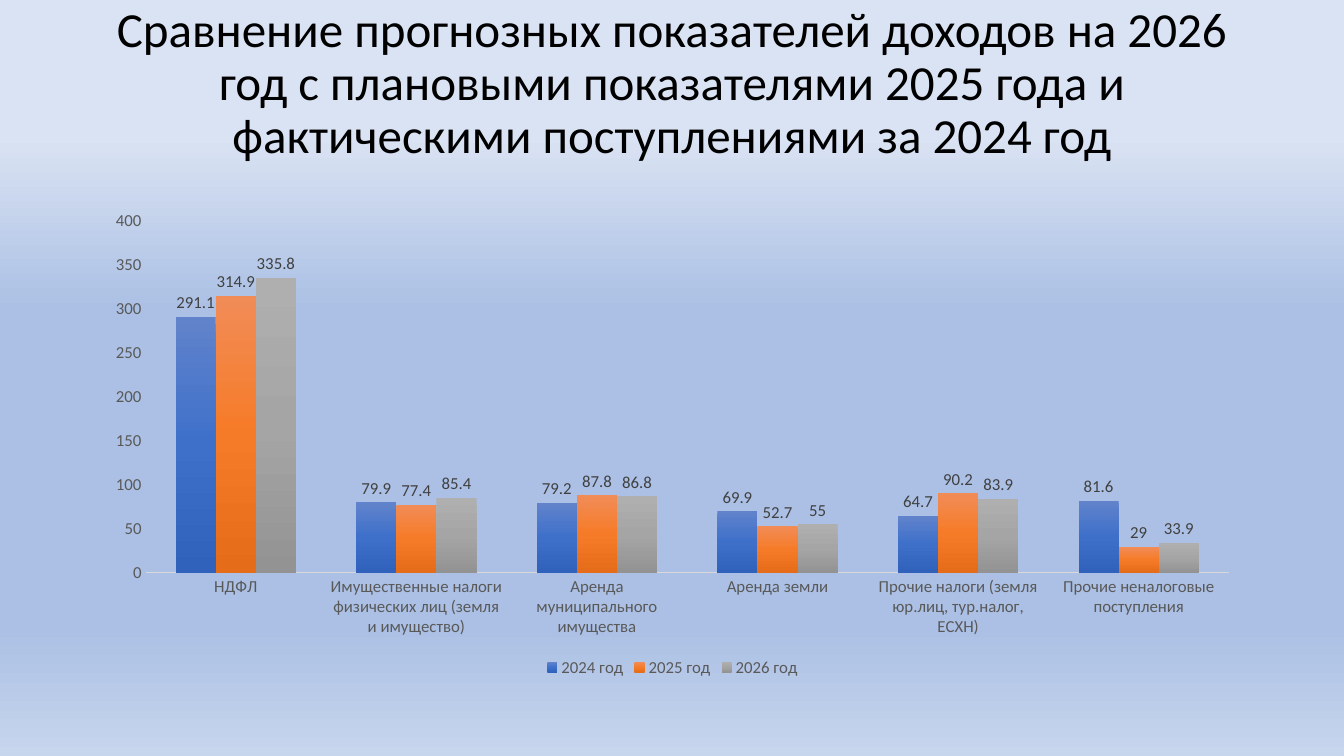
from lxml.etree import SubElement
from pptx import Presentation
from pptx.chart.data import CategoryChartData
from pptx.dml.color import RGBColor
from pptx.enum.chart import (
    XL_CHART_TYPE as ChartType,
    XL_LABEL_POSITION as LabelPosition,
    XL_LEGEND_POSITION as LegendPosition,
    XL_TICK_MARK as TickMark,
)
from pptx.enum.text import MSO_ANCHOR as Anchor, PP_ALIGN as Align
from pptx.oxml.ns import qn
from pptx.util import Inches, Pt

TITLE = (
    "Сравнение прогнозных показателей доходов на 2026 год с плановыми "
    "показателями 2025 года и фактическими поступлениями за 2024 год"
)
CATEGORIES = [
    "НДФЛ",
    "Имущественные налоги физических лиц (земля и имущество)",
    "Аренда муниципального имущества",
    "Аренда земли",
    "Прочие налоги (земля юр.лиц, тур.налог, ЕСХН)",
    "Прочие неналоговые поступления",
]
INCOME = {
    "2024 год": [291.1, 79.9, 79.2, 69.9, 64.7, 81.6],
    "2025 год": [314.9, 77.4, 87.8, 52.7, 90.2, 29],
    "2026 год": [335.8, 85.4, 86.8, 55, 83.9, 33.9],
}
THEME = {
    "font": "Calibri",
    "title_size": 35,
    "chart_size": 12,
    "title": "000000",
    "axis_text": "595959",
    "label_text": "404040",
    "axis_line": "D9D9D9",
    "background": [(18, "DAE3F3"), (41, "ABC0E4"), (83, "ABC0E4"), (100, "C7D5ED")],
    "bars": [
        [(0, "6183CB"), (50, "3E70CA"), (100, "3062BB")],
        [(0, "F18C57"), (50, "F67B28"), (100, "E56C19")],
        [(0, "AFAFAF"), (50, "A5A5A5"), (100, "939393")],
    ],
}
LEFT, WIDTH = Inches(0.92), Inches(11.5)


def set_font(font, size, color):
    font.name = THEME["font"]
    font.size = Pt(size)
    font.color.rgb = RGBColor.from_string(color)


def fill_downwards(fill, owner, stops):
    """Give fill a top-to-bottom gradient; owner is the XML element holding it."""
    fill.gradient()
    fill.gradient_angle = 270
    stop_list = next(owner.iter(qn("a:gsLst")))
    for default_stop in list(stop_list):
        stop_list.remove(default_stop)
    for percent, color in stops:
        stop = SubElement(stop_list, qn("a:gs"), pos=str(percent * 1000))
        SubElement(stop, qn("a:srgbClr"), val=color)


def add_title(slide):
    box = slide.shapes.add_textbox(LEFT, Inches(0.11), WIDTH, Inches(1.46))
    frame = box.text_frame
    frame.word_wrap = True
    frame.vertical_anchor = Anchor.MIDDLE
    paragraph = frame.paragraphs[0]
    paragraph.text = TITLE
    paragraph.alignment = Align.CENTER
    paragraph.line_spacing = 0.9
    set_font(paragraph.font, THEME["title_size"], THEME["title"])


def add_income_chart(slide):
    data = CategoryChartData()
    data.categories = CATEGORIES
    for year, values in INCOME.items():
        data.add_series(year, values)
    chart = slide.shapes.add_chart(
        ChartType.COLUMN_CLUSTERED, LEFT, Inches(2), WIDTH, Inches(4.76), data
    ).chart
    chart.has_title = False
    set_font(chart.font, THEME["chart_size"], THEME["axis_text"])

    chart.has_legend = True
    chart.legend.position = LegendPosition.BOTTOM
    chart.legend.include_in_layout = False
    set_font(chart.legend.font, THEME["chart_size"], THEME["axis_text"])

    for axis in (chart.category_axis, chart.value_axis):
        axis.has_major_gridlines = False
        axis.major_tick_mark = axis.minor_tick_mark = TickMark.NONE
        set_font(axis.tick_labels.font, THEME["chart_size"], THEME["axis_text"])
    category_line = chart.category_axis.format.line
    category_line.color.rgb = RGBColor.from_string(THEME["axis_line"])
    category_line.width = Pt(1)
    value_axis = chart.value_axis
    value_axis.format.line.fill.background()
    value_axis.minimum_scale, value_axis.maximum_scale = 0, 400
    value_axis.major_unit = 50

    plot = chart.plots[0]
    plot.gap_width = 150
    plot.overlap = 0
    plot.vary_by_categories = False
    for series, stops in zip(plot.series, THEME["bars"]):
        fill_downwards(series.format.fill, series._element, stops)
        labels = series.data_labels
        labels.show_value = True
        labels.position = LabelPosition.OUTSIDE_END
        set_font(labels.font, THEME["chart_size"], THEME["label_text"])


def main():
    presentation = Presentation()
    presentation.slide_width = Inches(13.33)
    presentation.slide_height = Inches(7.5)
    slide = presentation.slides.add_slide(presentation.slide_layouts[6])
    fill_downwards(slide.background.fill, slide._element, THEME["background"])
    add_title(slide)
    add_income_chart(slide)
    presentation.save("out.pptx")


if __name__ == "__main__":
    main()
